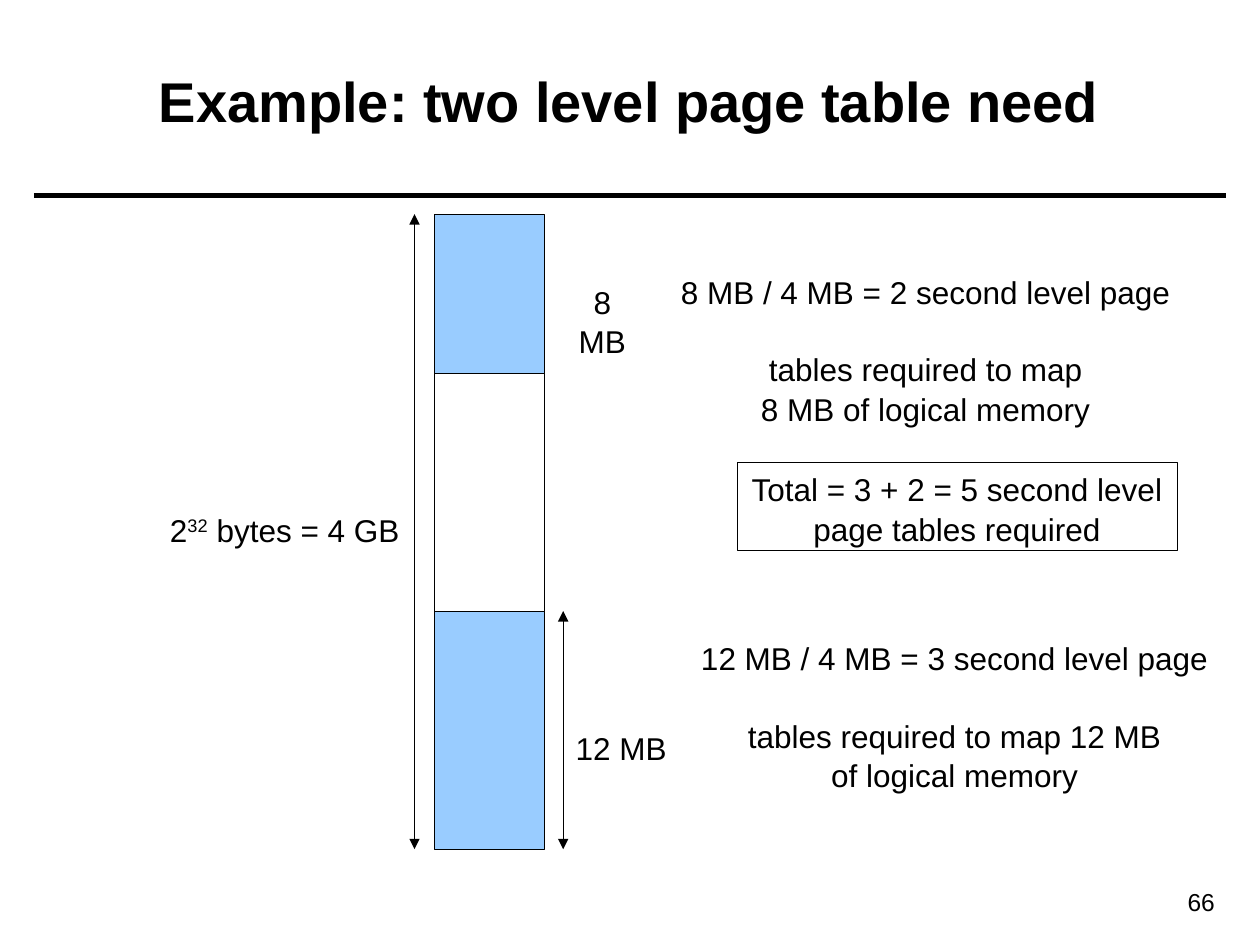
from typing import NamedTuple

import pptx
import pptx.dml.color
import pptx.enum.shapes
import pptx.enum.text
import pptx.util
from lxml import etree
from pptx.oxml.ns import qn

Inches = pptx.util.Inches
Pt = pptx.util.Pt
Align = pptx.enum.text.PP_ALIGN
Anchor = pptx.enum.text.MSO_ANCHOR

BLACK = pptx.dml.color.RGBColor(0x00, 0x00, 0x00)
WHITE = pptx.dml.color.RGBColor(0xFF, 0xFF, 0xFF)
BLUE = pptx.dml.color.RGBColor(0x99, 0xCC, 0xFF)

FONT = "Arial"
THIN = 0.25
BAR_LEFT, BAR_WIDTH, BAR_TOP = 3.45, 0.87, 1.7


class Box(NamedTuple):
    left: float
    top: float
    width: float
    height: float


class Block(NamedTuple):
    height: float
    fill: pptx.dml.color.RGBColor | None


class Label(NamedTuple):
    box: Box
    lines: list[str]
    gap: float = 0  # points after the first line


BLOCKS = [Block(1.26, BLUE), Block(1.89, None), Block(1.89, BLUE)]
LABELS = [
    Label(Box(4.47, 5.72, 0.92, 0.4), ["12 MB"]),
    Label(Box(4.39, 2.18, 0.78, 0.4), ["8 MB"]),
    Label(Box(1.24, 3.99, 2.04, 0.4), ["2^32^ bytes = 4 GB"]),
    Label(Box(5.43, 5.01, 4.29, 1.3),
          ["12 MB / 4 MB = 3 second level page",
           "tables required to map 12 MB", "of logical memory"], 21.6),
    Label(Box(5.27, 2.1, 4.15, 1.3),
          ["8 MB / 4 MB = 2 second level page",
           "tables required to map", "8 MB of logical memory"], 21.6),
]
TOTAL = ["Total = 3 + 2 = 5 second level", "page tables required"]


def place(box: Box) -> list[pptx.util.Length]:
    return [Inches(size) for size in box]


def write(shape, lines: list[str], *, size: float = 18, bold: bool = False,
          align=Align.CENTER, anchor=Anchor.TOP, wrap: bool = False,
          gap: float = 0, pitch: float = 1.05) -> None:
    """Fill a shape with lines; text between carets is superscript."""
    frame = shape.text_frame
    frame.word_wrap = wrap
    frame.vertical_anchor = anchor
    for row, line in enumerate(lines):
        para = frame.add_paragraph() if row else frame.paragraphs[0]
        para.alignment = align
        para.line_spacing = pitch
        if gap and row == 0:
            para.space_after = Pt(gap)
        for part, text in enumerate(line.split("^")):
            run = para.add_run()
            run.text = text
            font = run.font
            font.name, font.size, font.bold = FONT, Pt(size), bold
            font.color.rgb = BLACK
            if part % 2:
                run._r.get_or_add_rPr().set("baseline", "30000")


def draw_text(slide, box: Box, lines: list[str], **style) -> None:
    write(slide.shapes.add_textbox(*place(box)), lines, **style)


def draw_rect(slide, box: Box, fill=None):
    kind = pptx.enum.shapes.MSO_SHAPE.RECTANGLE
    rect = slide.shapes.add_shape(kind, *place(box))
    rect.shadow.inherit = False
    if fill is None:
        rect.fill.background()
    else:
        rect.fill.solid()
        rect.fill.fore_color.rgb = fill
    rect.line.color.rgb = BLACK
    rect.line.width = Pt(THIN)
    return rect


def draw_line(slide, start: tuple[float, float], end: tuple[float, float],
              width: float = THIN, arrows: bool = False) -> None:
    kind = pptx.enum.shapes.MSO_CONNECTOR.STRAIGHT
    line = slide.shapes.add_connector(kind, *map(Inches, start + end))
    line.line.color.rgb = BLACK
    line.line.width = Pt(width)
    if arrows:
        for tag in ("a:headEnd", "a:tailEnd"):
            etree.SubElement(line.line._get_or_add_ln(), qn(tag), type="triangle")
    etree.SubElement(line._element.spPr, qn("a:effectLst"))


def main() -> None:
    deck = pptx.Presentation()
    deck.slide_width, deck.slide_height = Inches(10), Inches(7.5)
    slide = deck.slides.add_slide(deck.slide_layouts[6])
    slide.background.fill.solid()
    slide.background.fill.fore_color.rgb = WHITE

    draw_line(slide, (0.27, 1.55), (9.73, 1.55), width=3)
    draw_text(slide, Box(8.7, 6.98, 1.04, 0.34), ["66"], size=14,
              align=Align.RIGHT, wrap=True)
    draw_text(slide, Box(0.35, 0.17, 9.29, 1.25),
              ["Example: two level page table need"], size=32, bold=True,
              anchor=Anchor.MIDDLE, wrap=True, pitch=1.0)

    top = BAR_TOP
    for block in BLOCKS:
        draw_rect(slide, Box(BAR_LEFT, top, BAR_WIDTH, block.height), block.fill)
        top += block.height
    draw_line(slide, (3.29, BAR_TOP), (3.29, top), arrows=True)
    draw_line(slide, (4.47, top - BLOCKS[-1].height), (4.47, top), arrows=True)

    for label in LABELS:
        draw_text(slide, label.box, label.lines, gap=label.gap)
    write(draw_rect(slide, Box(5.85, 3.67, 3.49, 0.7)), TOTAL)

    deck.save("out.pptx")


if __name__ == "__main__":
    main()
